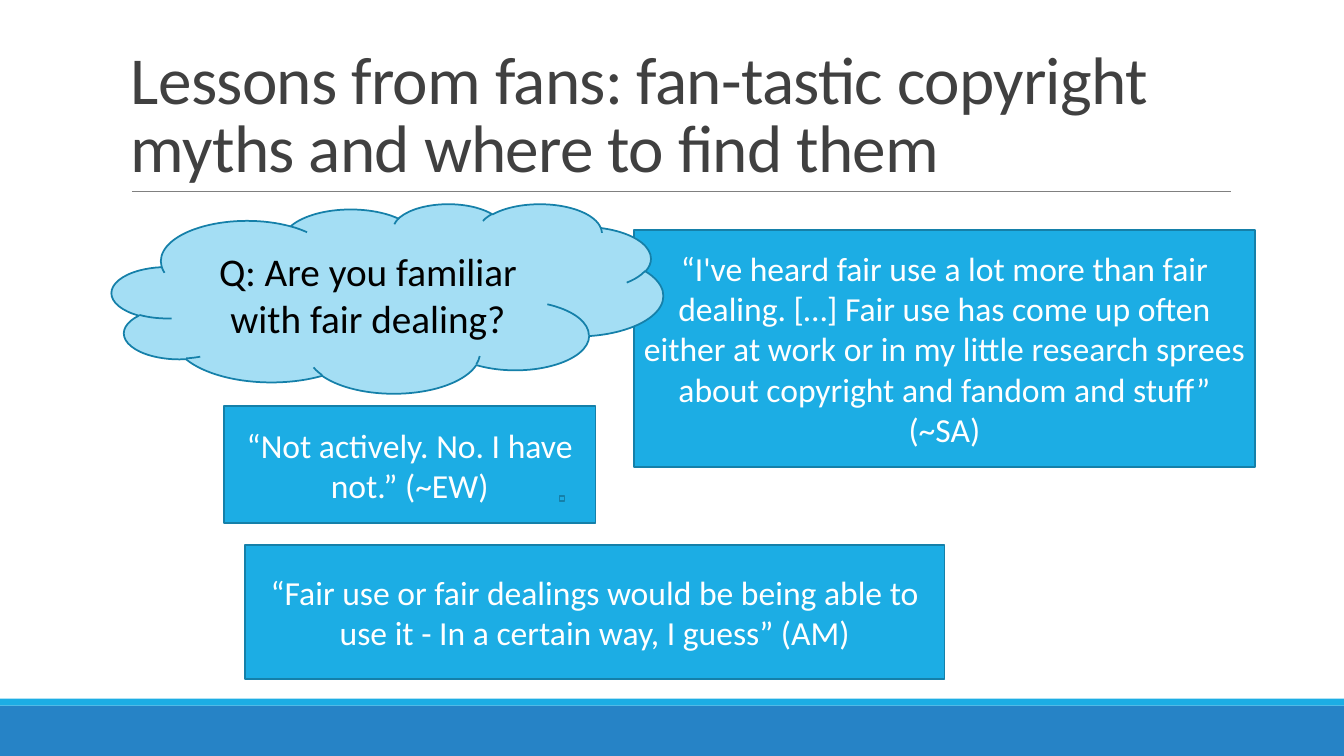
"""Build the slide on fans' answers about fair dealing."""
import pptx
import pptx.util
import pptx.dml.color
import pptx.enum.shapes
import pptx.enum.text
import pptx.oxml.ns
import lxml.etree

Pt = pptx.util.Pt
SHAPES = pptx.enum.shapes.MSO_SHAPE
ALIGN = pptx.enum.text.PP_ALIGN
ANCHOR = pptx.enum.text.MSO_ANCHOR

THEME = {
    "font": "Calibri",
    "title_size": 48, "quote_size": 24, "question_size": 28,
    "title": "404040", "quote": "FFFFFF", "question": "000000",
    "footer": "2683C6", "accent": "1CADE4", "cloud": "A4DEF4",
    "outline": "1580A9", "rule": "808080",
}
SLIDE_WIDTH, SLIDE_HEIGHT = 960, 540
FOOTER_HEIGHT, STRIPE_HEIGHT = 36, 5
RULE_LEFT, RULE_RIGHT, RULE_TOP = 94.3, 879.1, 136.8

TITLE = "Lessons from fans: fan-tastic copyright myths and where to find them"
TITLE_PLACE = (86.4, 22.3, 792, 114.5)
QUOTES = [
    ("“Fair use or fair dealings would be being able to use it - In a certain way, I guess” (AM)",
     (175, 389.5, 499.7, 95.8)),
    ("“Not actively. No. I have not.” (~EW)",
     (159.8, 290.2, 265.7, 83.5)),
    ("“I've heard fair use a lot more than fair dealing. […] Fair use has come up often either "
     "at work or in my little research sprees about copyright and fandom and stuff” (~SA)",
     (452.9, 164.2, 443.5, 169.2)),
]
QUESTION = ("Q: Are you familiar with fair dealing?", (79.9, 145.4, 393.8, 135.4))
MARKER_PLACE = (399.6, 354.2, 3.6, 3.6)


def color(name):
    return pptx.dml.color.RGBColor.from_string(THEME[name])


def add_block(slide, kind, place, fill, outlined=True):
    block = slide.shapes.add_shape(kind, *map(Pt, place))
    block.shadow.inherit = False
    block.fill.solid()
    block.fill.fore_color.rgb = color(fill)
    if outlined:
        block.line.color.rgb = color("outline")
        block.line.width = Pt(1.25)
    else:
        block.line.fill.background()
    return block


def write(box, text, style, align, anchor):
    frame = box.text_frame
    frame.word_wrap = True
    frame.vertical_anchor = anchor
    frame.text = text
    para = frame.paragraphs[0]
    para.alignment = align
    span = para.runs[0]
    span.font.name = THEME["font"]
    span.font.size = Pt(THEME[style + "_size"])
    span.font.color.rgb = color(style)
    return para


def add_frame(slide):
    footer_top = SLIDE_HEIGHT - FOOTER_HEIGHT
    bars = [(footer_top, FOOTER_HEIGHT, "footer"),
            (footer_top - STRIPE_HEIGHT, STRIPE_HEIGHT, "accent")]
    for top, height, fill in bars:
        add_block(slide, SHAPES.RECTANGLE, (0, top, SLIDE_WIDTH, height), fill, False)
    rule = slide.shapes.add_connector(
        pptx.enum.shapes.MSO_CONNECTOR.STRAIGHT,
        Pt(RULE_LEFT), Pt(RULE_TOP), Pt(RULE_RIGHT), Pt(RULE_TOP))
    rule.line.color.rgb = color("rule")
    rule.line.width = Pt(0.5)
    lxml.etree.SubElement(rule._element.spPr, pptx.oxml.ns.qn("a:effectLst"))


def add_title(slide):
    box = slide.shapes.add_textbox(*map(Pt, TITLE_PLACE))
    para = write(box, TITLE, "title", ALIGN.LEFT, ANCHOR.BOTTOM)
    para.line_spacing = 0.85
    para.runs[0].font._element.set("spc", "-50")


def main():
    deck = pptx.Presentation()
    deck.slide_width, deck.slide_height = Pt(SLIDE_WIDTH), Pt(SLIDE_HEIGHT)
    page = deck.slides.add_slide(deck.slide_layouts[6])
    add_frame(page)
    add_title(page)
    for text, place in QUOTES:
        box = add_block(page, SHAPES.RECTANGLE, place, "accent")
        write(box, text, "quote", ALIGN.CENTER, ANCHOR.MIDDLE)
    text, place = QUESTION
    cloud = add_block(page, SHAPES.CLOUD, place, "cloud")
    write(cloud, text, "question", ALIGN.CENTER, ANCHOR.MIDDLE)
    add_block(page, SHAPES.RECTANGLE, MARKER_PLACE, "accent")
    deck.save("out.pptx")


if __name__ == "__main__":
    main()
